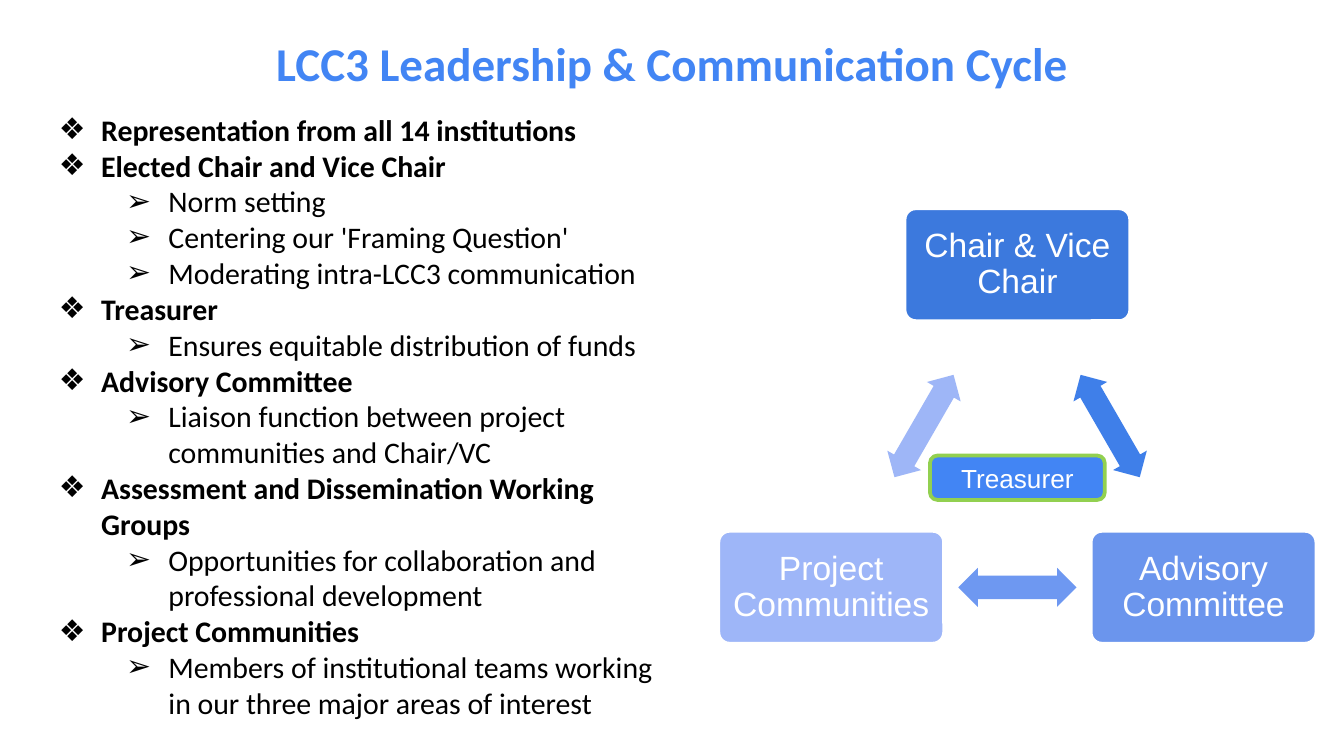
from dataclasses import dataclass

from lxml import etree
from pptx import Presentation
from pptx.dml.color import RGBColor
from pptx.enum.shapes import MSO_SHAPE
from pptx.enum.text import MSO_ANCHOR, PP_ALIGN
from pptx.oxml.ns import qn
from pptx.util import Pt

ROUND_RECT = MSO_SHAPE.ROUNDED_RECTANGLE
DOUBLE_ARROW = MSO_SHAPE.LEFT_RIGHT_ARROW
TOP, MIDDLE = MSO_ANCHOR.TOP, MSO_ANCHOR.MIDDLE
CENTER = PP_ALIGN.CENTER

PX = 4572  # EMU per px, 200 px to the inch


@dataclass(frozen=True)
class Theme:
    accent: str = "4285F4"
    green: str = "92D050"
    black: str = "000000"
    white: str = "FFFFFF"
    heading_font: str = "Calibri"
    diagram_font: str = "Arial"
    title_size: float = 25.2
    body_size: float = 16
    card_size: float = 18
    badge_size: float = 14
    line_width: float = 2


@dataclass(frozen=True)
class Bullet:
    text: str
    level: int = 0


@dataclass(frozen=True)
class Card:
    text: str
    cx: int
    cy: int
    color: str


@dataclass(frozen=True)
class Link:
    start: Card
    end: Card
    rotation: int
    color: str


THEME = Theme()
SLIDE_W, SLIDE_H = 2000, 1125
BULLET_MARKS = ("❖", "➢")
BULLET_INDENTS = (63, 163)
HANGING = 63
CARD_W, CARD_H = 336, 168
ARROW_W, ARROW_H = 176, 58

BULLETS = (
    Bullet("Representation from all 14 institutions"),
    Bullet("Elected Chair and Vice Chair"),
    Bullet("Norm setting", 1),
    Bullet("Centering our 'Framing Question'", 1),
    Bullet("Moderating intra-LCC3 communication", 1),
    Bullet("Treasurer"),
    Bullet("Ensures equitable distribution of funds", 1),
    Bullet("Advisory Committee"),
    Bullet("Liaison function between project communities and Chair/VC", 1),
    Bullet("Assessment and Dissemination Working Groups"),
    Bullet("Opportunities for collaboration and professional development", 1),
    Bullet("Project Communities"),
    Bullet("Members of institutional teams working in our three major areas of interest", 1),
)

CHAIR = Card("Chair & Vice Chair", 1514, 394, "3C79DD")
ADVISORY = Card("Advisory Committee", 1791, 874, "6B95ED")
PROJECTS = Card("Project Communities", 1237, 874, "9EB6F8")
CARDS = (CHAIR, ADVISORY, PROJECTS)
LINKS = (
    Link(CHAIR, ADVISORY, 60, "3F7FE9"),
    Link(ADVISORY, PROJECTS, 180, "6E98F1"),
    Link(PROJECTS, CHAIR, 300, "9EB6F7"),
)


def style_runs(p, font: str, size: float, color: str, bold: bool = False) -> None:
    for r in p.runs:
        r.font.name = font
        r.font.size = Pt(size)
        r.font.bold = bold
        r.font.color.rgb = RGBColor.from_string(color)


def set_insets(tf, x: int, y: int) -> None:
    tf.margin_left = tf.margin_right = x * PX
    tf.margin_top = tf.margin_bottom = y * PX


def add_text_box(s, x: int, y: int, w: int, h: int):
    tf = s.shapes.add_textbox(x * PX, y * PX, w * PX, h * PX).text_frame
    tf.word_wrap = True
    tf.vertical_anchor = TOP
    return tf


def add_centered_shape(s, kind, cx: int, cy: int, w: int, h: int, fill: str, line: str = ""):
    sp = s.shapes.add_shape(kind, (cx - w // 2) * PX, (cy - h // 2) * PX, w * PX, h * PX)
    sp.shadow.inherit = False
    sp.fill.solid()
    sp.fill.fore_color.rgb = RGBColor.from_string(fill)
    if line:
        sp.line.color.rgb = RGBColor.from_string(line)
        sp.line.width = Pt(THEME.line_width)
    else:
        sp.line.fill.background()
    return sp


def label_shape(sp, text: str, size: float) -> None:
    tf = sp.text_frame
    tf.word_wrap = True
    tf.vertical_anchor = MIDDLE
    tf.text = text
    p = tf.paragraphs[0]
    p.alignment = CENTER
    style_runs(p, THEME.diagram_font, size, THEME.white)


def set_bullet(p, level: int) -> None:
    p.level = level
    pPr = p._p.get_or_add_pPr()
    pPr.set("marL", str(BULLET_INDENTS[level] * PX))
    pPr.set("indent", str(-HANGING * PX))
    color = etree.SubElement(pPr, qn("a:buClr"))
    etree.SubElement(color, qn("a:srgbClr"), val=THEME.black)
    etree.SubElement(pPr, qn("a:buFont"), typeface=THEME.diagram_font)
    etree.SubElement(pPr, qn("a:buChar"), char=BULLET_MARKS[level])


def add_title(s, text: str) -> None:
    tf = add_text_box(s, 68, 32, 1864, 126)
    set_insets(tf, 20, 20)
    tf.text = text
    p = tf.paragraphs[0]
    p.alignment = CENTER
    style_runs(p, THEME.heading_font, THEME.title_size, THEME.accent, bold=True)


def add_bullets(s, bullets: tuple[Bullet, ...]) -> None:
    tf = add_text_box(s, 68, 156, 932, 1044)
    set_insets(tf, 20, 10)
    tf.text = "\n".join(b.text for b in bullets)
    for p, b in zip(tf.paragraphs, bullets):
        set_bullet(p, b.level)
        style_runs(p, THEME.heading_font, THEME.body_size, THEME.black, bold=b.level == 0)


def add_card(s, card: Card) -> None:
    sp = add_centered_shape(s, ROUND_RECT, card.cx, card.cy, CARD_W, CARD_H, card.color, THEME.white)
    sp.adjustments[0] = 0.1
    label_shape(sp, card.text, THEME.card_size)
    set_insets(sp.text_frame, 14, 14)
    sp.text_frame.paragraphs[0].line_spacing = 0.9


def add_link(s, link: Link) -> None:
    a, b = link.start, link.end
    cx, cy = (a.cx + b.cx) // 2, (a.cy + b.cy) // 2
    sp = add_centered_shape(s, DOUBLE_ARROW, cx, cy, ARROW_W, ARROW_H, link.color)
    sp.adjustments[0], sp.adjustments[1] = 0.6, 0.5
    sp.rotation = link.rotation


def main() -> None:
    prs = Presentation()
    prs.slide_width, prs.slide_height = SLIDE_W * PX, SLIDE_H * PX
    s = prs.slides.add_slide(prs.slide_layouts[6])

    add_title(s, "LCC3 Leadership & Communication Cycle")

    # Communication cycle
    for card in CARDS:
        add_card(s, card)
    for link in LINKS:
        add_link(s, link)

    # Treasurer badge inside the cycle
    badge = add_centered_shape(s, ROUND_RECT, 1514, 711, 260, 66, THEME.accent, THEME.green)
    label_shape(badge, "Treasurer", THEME.badge_size)

    # Roles list
    add_bullets(s, BULLETS)

    prs.save("out.pptx")


if __name__ == "__main__":
    main()
